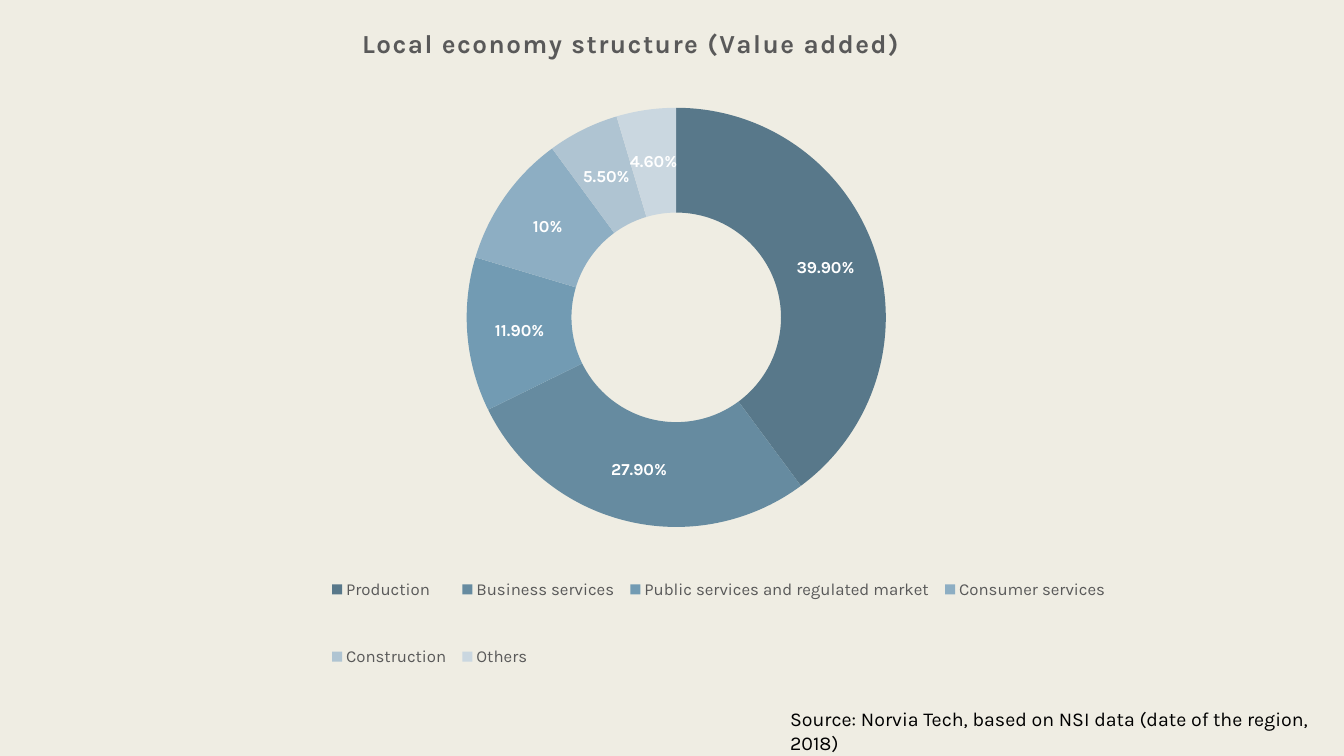
from lxml import etree
from pptx import Presentation
from pptx.chart.data import CategoryChartData
from pptx.dml.color import RGBColor
from pptx.enum.chart import XL_CHART_TYPE, XL_LEGEND_POSITION
from pptx.oxml.ns import qn
from pptx.util import Cm, Pt

DOUGHNUT = XL_CHART_TYPE.DOUGHNUT
LEGEND_TOP = XL_LEGEND_POSITION.TOP
FONT = "Karla"
TITLE = "Local economy structure (Value added)"
SECTORS = [
    ("Production", 0.399, "58788A"),
    ("Business services", 0.279, "668BA0"),
    ("Public services and regulated market", 0.119, "729BB3"),
    ("Consumer services", 0.103, "8DAEC3"),
    ("Construction", 0.055, "AFC4D2"),
    ("Others", 0.046, "CAD7E0"),
]
CONSUMER = 3


def style_font(font, size, color, bold=False):
    font.name = FONT
    font.size = Pt(size)
    font.bold = bold
    font.color.rgb = RGBColor.from_string(color)


def place(element, index, **settings):
    """Give a chart part a manual layout in fractions of the chart area."""
    for old in element.findall(qn("c:layout")):
        element.remove(old)
    layout = etree.Element(qn("c:layout"))
    manual = etree.SubElement(layout, qn("c:manualLayout"))
    for tag, value in settings.items():
        etree.SubElement(manual, qn(f"c:{tag}")).set("val", str(value))
    element.insert(index, layout)


deck = Presentation()
deck.slide_width, deck.slide_height = Cm(33.87), Cm(19.05)
page = deck.slides.add_slide(deck.slide_layouts[6])
page.background.fill.solid()
page.background.fill.fore_color.rgb = RGBColor.from_string("EFEDE3")

# Doughnut chart
data = CategoryChartData(number_format="0.00%")
data.categories = [name for name, share, color in SECTORS]
data.add_series(TITLE, [share for name, share, color in SECTORS])
chart = page.shapes.add_chart(
    DOUGHNUT, Cm(6.25), Cm(0.18), Cm(21.87), Cm(17.81), data).chart
style_font(chart.font, 10, "000000")
plot = chart.plots[0]
plot.vary_by_categories = True
series = plot.series[0]
for index, (name, share, color) in enumerate(SECTORS):
    fill = series.points[index].format.fill
    fill.solid()
    fill.fore_color.rgb = RGBColor.from_string(color)
place(chart._chartSpace.chart.plotArea, 0, layoutTarget="inner",
      xMode="edge", yMode="edge", x=0.252, y=0.142, w=0.483, h=0.594)

# Shares in the ring; consumer services show a rounded percentage
labels = series.data_labels
labels.show_value = True
labels.show_percentage = False
labels.number_format = "0.00%"
labels.number_format_is_linked = False
style_font(labels.font, 12, "FFFFFF", True)
consumer_label = series.points[CONSUMER].data_label
style_font(consumer_label.font, 12, "FFFFFF", True)
label_xml = labels._element.find(qn("c:dLbl"))
number_format = etree.Element(qn("c:numFmt"), formatCode="0%", sourceLinked="0")
label_xml.find(qn("c:idx")).addnext(number_format)
label_xml.find(qn("c:showVal")).set("val", "0")
label_xml.find(qn("c:showPercent")).set("val", "1")

# Title
chart.has_title = True
title = chart.chart_title
title.text_frame.text = TITLE
span = title.text_frame.paragraphs[0].runs[0]
style_font(span.font, 18.6, "595959", True)
span._r.get_or_add_rPr().set("spc", "100")
place(title._element, 1, xMode="edge", yMode="edge", x=0.126, y=0.02)

# Legend
chart.has_legend = True
legend = chart.legend
legend.position = LEGEND_TOP
legend.include_in_layout = False
style_font(legend.font, 12, "595959")
place(legend._element, 1, xMode="edge", yMode="edge",
      x=0.085, y=0.743, w=0.915, h=0.257)

# Source note
box = page.shapes.add_textbox(Cm(19.66), Cm(17.7), Cm(14.2), Cm(0.86))
box.text_frame.word_wrap = True
para = box.text_frame.paragraphs[0]
para.text = "Source: Norvia Tech, based on NSI data (date of the region, 2018)"
style_font(para.runs[0].font, 14, "000000")

deck.save("out.pptx")
